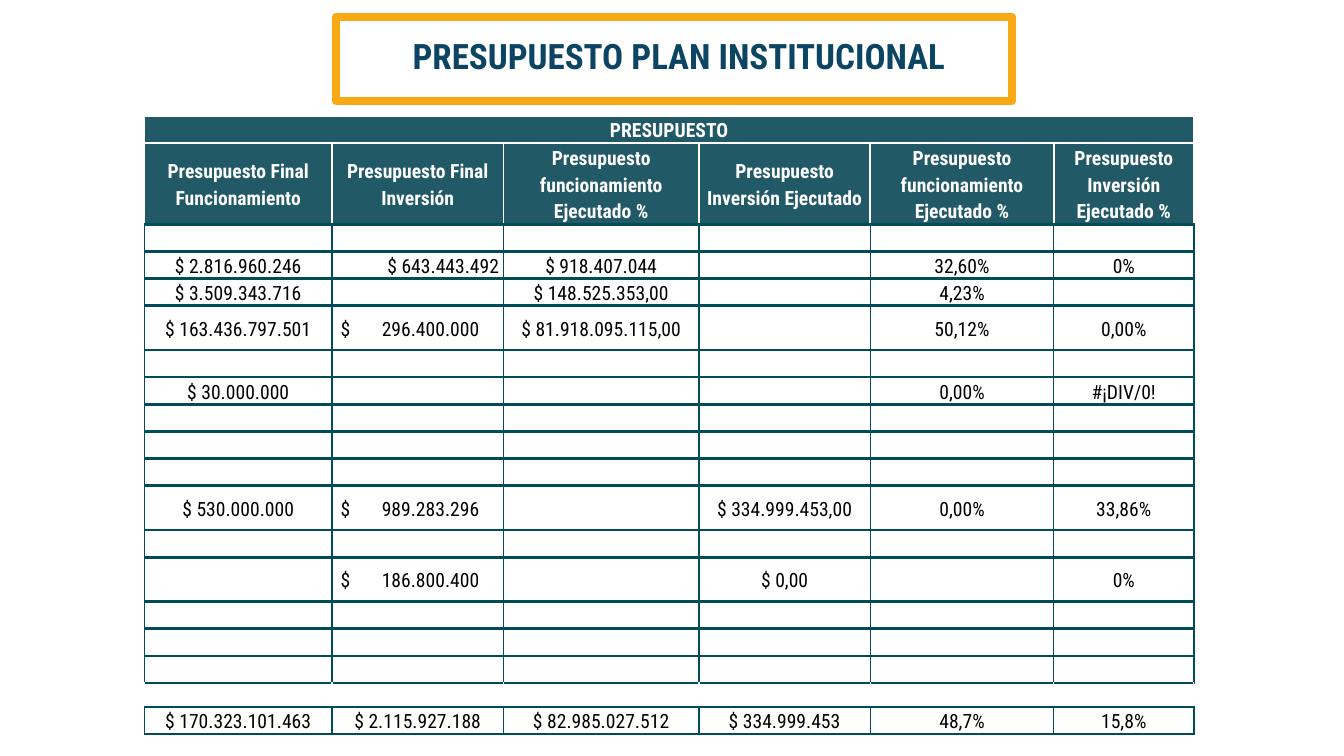
from lxml.etree import SubElement
from pptx import Presentation
from pptx.dml.color import RGBColor
from pptx.enum.shapes import MSO_SHAPE
from pptx.enum.text import MSO_ANCHOR, PP_ALIGN
from pptx.oxml.ns import qn
from pptx.util import Pt

WHITE = RGBColor(0xFF, 0xFF, 0xFF)
BLACK = RGBColor(0, 0, 0)
NAVY = RGBColor(0x0C, 0x45, 0x63)
GOLD = RGBColor(0xF8, 0xA9, 0x13)
TEAL = RGBColor(0x21, 0x59, 0x67)
GRID = RGBColor(0x00, 0x4C, 0x5A)

COLS = [134, 122.4, 139.7, 122.4, 131, 100.1]
LOW, HIGH, HEAD, GAP = 19.4, 31.7, 57.2, 17.1
EMPTY = (LOW, [""] * 6)
SPACER = (GAP, [""] * 6)

# Each row: height and cell texts; a tab marks an accounting amount
ROWS = [
    (LOW, ["PRESUPUESTO"] + [""] * 5),
    (HEAD, ["Presupuesto Final Funcionamiento", "Presupuesto Final Inversión",
            "Presupuesto funcionamiento Ejecutado %", "Presupuesto Inversión Ejecutado",
            "Presupuesto funcionamiento Ejecutado %", "Presupuesto Inversión Ejecutado %"]),
    EMPTY,
    (LOW, ["$ 2.816.960.246", "$ 643.443.492", "$ 918.407.044", "", "32,60%", "0%"]),
    (LOW, ["$ 3.509.343.716", "", "$ 148.525.353,00", "", "4,23%", ""]),
    (HIGH, ["$ 163.436.797.501", "$\t296.400.000", "$ 81.918.095.115,00", "",
            "50,12%", "0,00%"]),
    EMPTY,
    (LOW, ["$ 30.000.000", "", "", "", "0,00%", "#¡DIV/0!"]),
    EMPTY, EMPTY, EMPTY,
    (HIGH, ["$ 530.000.000", "$\t989.283.296", "", "$ 334.999.453,00", "0,00%", "33,86%"]),
    EMPTY,
    (HIGH, ["", "$\t186.800.400", "", "$ 0,00", "", "0%"]),
    EMPTY, EMPTY, EMPTY,
    SPACER,
    (LOW, ["$ 170.323.101.463", "$ 2.115.927.188", "$ 82.985.027.512",
           "$ 334.999.453", "48,7%", "15,8%"]),
]
RIGHT = {(3, 1)}


def edges(row, col):
    """Return the border colour and width for each side that has one."""
    thin, thick, pale = (GRID, 1), (GRID, 2.25), (WHITE, 1.5)
    if row == 0:
        return {"L": pale, "B": pale}
    if row == 1:
        return {"L": pale, "R": pale, "T": pale, "B": thick}
    if ROWS[row] is SPACER:
        return {"T": thick, "B": thick}
    side = (GRID, 1.5) if col == len(COLS) - 1 else thin
    return {"L": thin, "R": side, "T": thick, "B": thick}


class Deck:
    font = "Roboto Condensed"
    size = 14

    def __init__(self):
        self.file = Presentation()
        self.file.slide_width, self.file.slide_height = Pt(960), Pt(540)
        self.slide = self.file.slides.add_slide(self.file.slide_layouts[6])

    def style(self, para, size, color, bold, align, space):
        para.alignment, para.line_spacing = align, space
        font = para.font
        font.name, font.size, font.bold = self.font, Pt(size), bold
        font.color.rgb = color

    def frame(self, left, top, width, height):
        box = self.slide.shapes.add_shape(
            MSO_SHAPE.RECTANGLE, Pt(left), Pt(top), Pt(width), Pt(height))
        box.shadow.inherit = False
        box.fill.background()
        box.line.color.rgb, box.line.width = GOLD, Pt(6)

    def title(self, text, left, top, width, height):
        box = self.slide.shapes.add_textbox(Pt(left), Pt(top), Pt(width), Pt(height))
        box.text_frame.word_wrap = True
        para = box.text_frame.paragraphs[0]
        para.text = text
        self.style(para, 25, NAVY, True, PP_ALIGN.CENTER, 0.9)

    def table(self, left, top):
        high = sum(height for height, _ in ROWS)
        table = self.slide.shapes.add_table(
            len(ROWS), len(COLS), Pt(left), Pt(top), Pt(sum(COLS)), Pt(high)).table
        table.horz_banding = table.first_row = False
        for col, width in zip(table.columns, COLS):
            col.width = Pt(width)
        for r, (height, texts) in enumerate(ROWS):
            table.rows[r].height = Pt(height)
            for c, text in enumerate(texts):
                self.cell(table.cell(r, c), text, r, c)
        table.cell(0, 0).merge(table.cell(0, len(COLS) - 1))

    def cell(self, cell, text, row, col):
        head, money = row < 2, "\t" in text
        cell.vertical_anchor = MSO_ANCHOR.MIDDLE
        cell.margin_left = Pt(6.2 if money else 3)
        cell.margin_right = Pt(3)
        cell.margin_top = cell.margin_bottom = 0
        self.border(cell, edges(row, col))
        if head:
            cell.fill.solid()
            cell.fill.fore_color.rgb = TEAL
        else:
            cell.fill.background()
        para = cell.text_frame.paragraphs[0]
        if not text:
            SubElement(para._p, qn("a:endParaRPr"), sz="1000")
            return
        para.text = text
        align = PP_ALIGN.RIGHT if (row, col) in RIGHT else PP_ALIGN.CENTER
        if money:
            align = PP_ALIGN.LEFT
            tabs = SubElement(para._p.get_or_add_pPr(), qn("a:tabLst"))
            SubElement(tabs, qn("a:tab"), pos=str(Pt(29.3)), algn="l")
        self.style(para, self.size, WHITE if head else BLACK, head, align, 1.15)

    def border(self, cell, sides):
        props = cell._tc.get_or_add_tcPr()
        for side, (color, width) in sides.items():
            line = SubElement(props, qn(f"a:ln{side}"), w=str(Pt(width)))
            fill = SubElement(line, qn("a:solidFill"))
            SubElement(fill, qn("a:srgbClr"), val=str(color))


def main():
    deck = Deck()
    deck.frame(239.8, 12.2, 483.1, 59.8)
    deck.title("PRESUPUESTO PLAN INSTITUCIONAL", 219.6, 24.5, 530.6, 39.6)
    deck.table(103.2, 82.8)
    deck.file.save("out.pptx")


if __name__ == "__main__":
    main()
